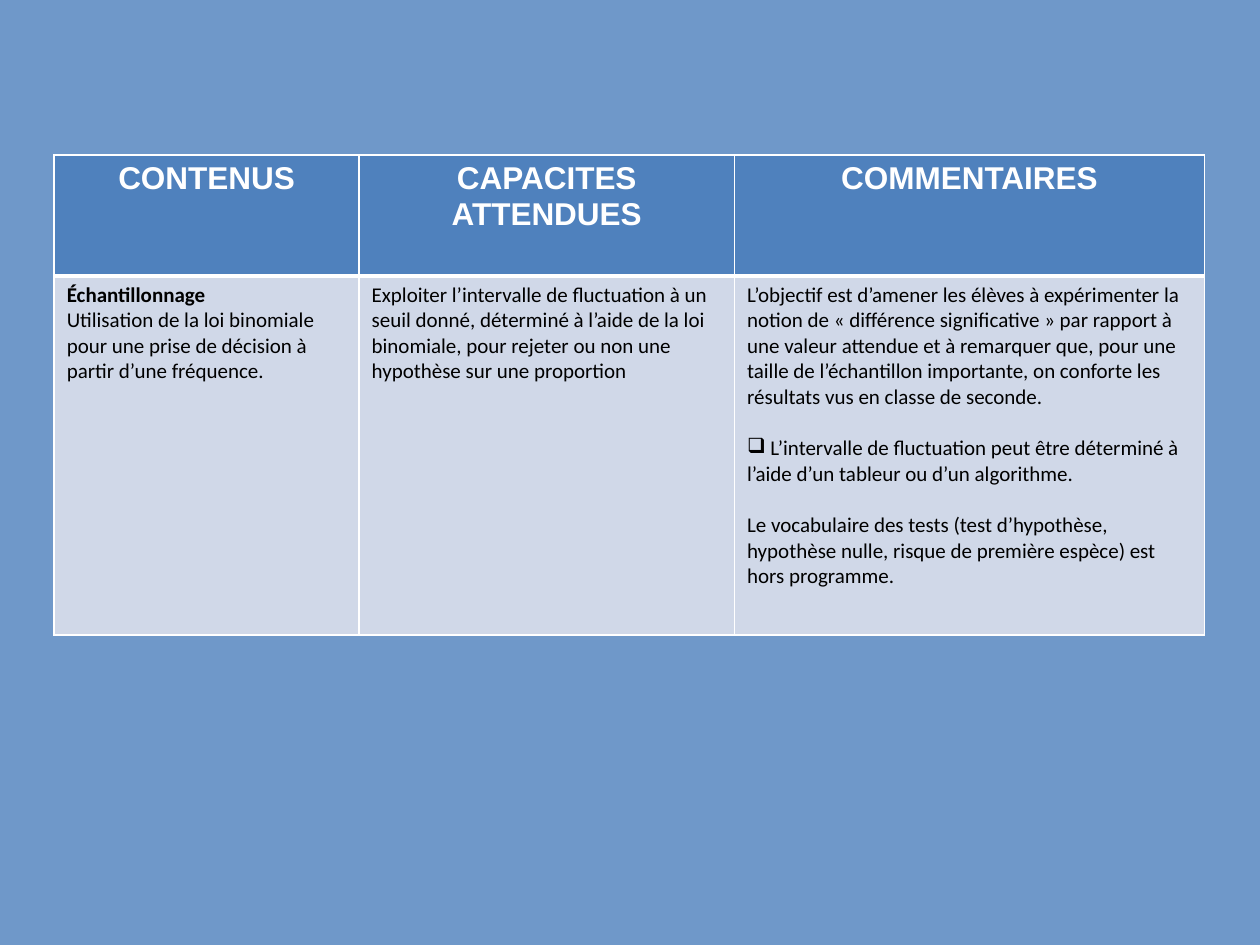
import pptx
import pptx.dml.color
import pptx.enum.text
import pptx.oxml
import pptx.oxml.ns
import pptx.util
from lxml import etree

RGBColor = pptx.dml.color.RGBColor
BACKGROUND = RGBColor(0x6F, 0x98, 0xC9)
HEADER_FILL = RGBColor(0x4F, 0x81, 0xBD)
BODY_FILL = RGBColor(0xD0, 0xD8, 0xE8)
WHITE = RGBColor(0xFF, 0xFF, 0xFF)
BLACK = RGBColor(0, 0, 0)

SLIDE_WIDTH = pptx.util.Inches(10)
SLIDE_HEIGHT = pptx.util.Inches(7.5)
TABLE_BOX = [pptx.util.Inches(length) for length in (0.43, 1.23, 9.13, 3.81)]
COLUMN_PARTS = (2.42, 2.98, 3.73)
ROW_PARTS = (0.96, 2.85)
BLANK_LINE = pptx.util.Pt(14.6)

HEADINGS = ("CONTENUS", "CAPACITES ATTENDUES", "COMMENTAIRES")
# Each paragraph: text, bold, bullet character, space before
BODY = (
    (
        ("Échantillonnage", True, None, 0),
        ("Utilisation de la loi binomiale pour une prise de décision à partir "
         "d’une fréquence.", False, None, 0),
    ),
    (
        ("Exploiter l’intervalle de fluctuation à un seuil donné, déterminé à "
         "l’aide de la loi binomiale, pour rejeter ou non une hypothèse sur une "
         "proportion", False, None, 0),
    ),
    (
        ("L’objectif est d’amener les élèves à expérimenter la notion de "
         "« différence significative » par rapport à une valeur attendue et à "
         "remarquer que, pour une taille de l’échantillon importante, on conforte "
         "les résultats vus en classe de seconde.", False, None, 0),
        (" L’intervalle de fluctuation peut être déterminé à l’aide d’un tableur "
         "ou d’un algorithme.", False, "❑", BLANK_LINE),
        ("Le vocabulaire des tests (test d’hypothèse, hypothèse nulle, risque de "
         "première espèce) est hors programme.", False, None, BLANK_LINE),
    ),
)


def add_run(paragraph, text, font_name, size, color, bold):
    run = paragraph.add_run()
    run.text = text
    run.font.name = font_name
    run.font.size = pptx.util.Pt(size)
    run.font.color.rgb = color
    run.font.bold = bold


def set_bullet(paragraph, character):
    properties = paragraph._p.get_or_add_pPr()
    properties.set("marL", "0")
    properties.set("indent", "0")
    bullet = etree.SubElement(properties, pptx.oxml.ns.qn("a:buChar"))
    bullet.set("char", character)


def style_cell(cell, fill_color, top_width, bottom_width):
    """Draw white borders (widths in points) and fill the cell."""
    properties = cell._tc.get_or_add_tcPr()
    widths = {"lnL": 1, "lnR": 1, "lnT": top_width, "lnB": bottom_width}
    for side, width in widths.items():
        properties.append(pptx.oxml.parse_xml(
            f'<a:{side} {pptx.oxml.ns.nsdecls("a")} w="{pptx.util.Pt(width)}">'
            f'<a:solidFill><a:srgbClr val="{WHITE}"/></a:solidFill></a:{side}>'
        ))
    cell.fill.solid()
    cell.fill.fore_color.rgb = fill_color


def fill_header_cell(cell, heading):
    style_cell(cell, HEADER_FILL, 1, 3)
    paragraph = cell.text_frame.paragraphs[0]
    paragraph.alignment = pptx.enum.text.PP_ALIGN.CENTER
    add_run(paragraph, heading, "Arial", 18, WHITE, True)


def fill_body_cell(cell, entries):
    style_cell(cell, BODY_FILL, 3, 1)
    frame = cell.text_frame
    for index, (text, bold, bullet, space_before) in enumerate(entries):
        paragraph = frame.add_paragraph() if index else frame.paragraphs[0]
        paragraph.space_before = pptx.util.Pt(0) if not space_before else space_before
        if bullet:
            set_bullet(paragraph, bullet)
        add_run(paragraph, text, "Calibri", 12, BLACK, bold)


def add_programme_table(slide, left, top, width, height):
    table = slide.shapes.add_table(
        len(ROW_PARTS), len(COLUMN_PARTS), left, top, width, height).table
    table.horz_banding = False
    for column, part in zip(table.columns, COLUMN_PARTS):
        column.width = int(width * part / sum(COLUMN_PARTS))
    for row, part in zip(table.rows, ROW_PARTS):
        row.height = int(height * part / sum(ROW_PARTS))
    for index, (heading, entries) in enumerate(zip(HEADINGS, BODY)):
        fill_header_cell(table.cell(0, index), heading)
        fill_body_cell(table.cell(1, index), entries)


def main():
    presentation = pptx.Presentation()
    presentation.slide_width = SLIDE_WIDTH
    presentation.slide_height = SLIDE_HEIGHT
    slide = presentation.slides.add_slide(presentation.slide_layouts[6])
    slide.background.fill.solid()
    slide.background.fill.fore_color.rgb = BACKGROUND
    add_programme_table(slide, *TABLE_BOX)
    presentation.save("out.pptx")


if __name__ == "__main__":
    main()
